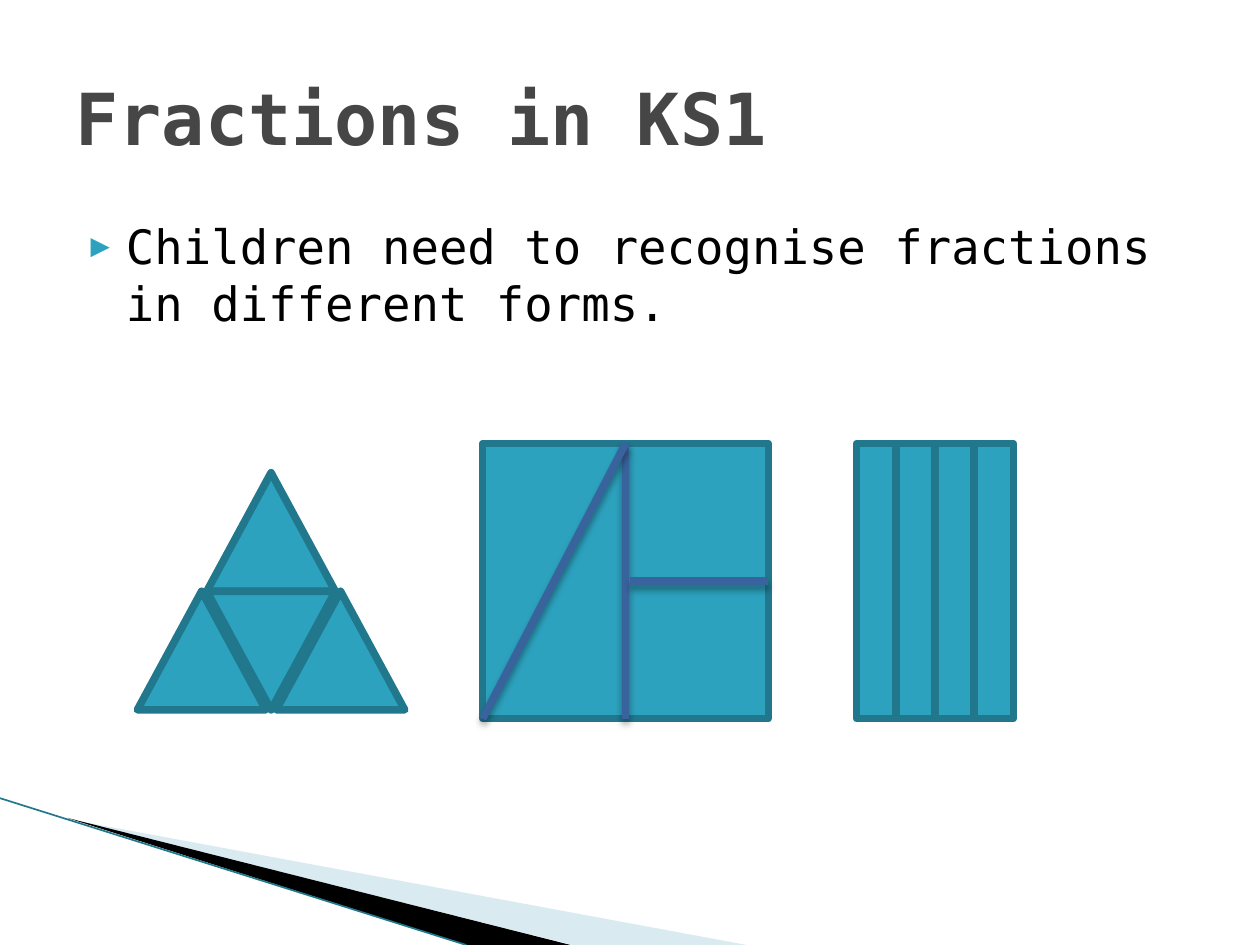
from lxml.etree import SubElement as Sub
from pptx import Presentation
from pptx.dml.color import RGBColor as Rgb
from pptx.enum.shapes import MSO_CONNECTOR as Link, MSO_SHAPE as Kind
from pptx.enum.text import MSO_ANCHOR as Anchor, PP_ALIGN as Align
from pptx.oxml.ns import qn
from pptx.util import Cm, Pt

TITLE = "Fractions in KS1"
BODY = "Children need to recognise fractions in different forms."

THEME = {
    "font": "DejaVu Sans Mono",
    "fill": "2DA2BF", "edge": "21788D", "cut": "39639D",
    "pale": "A0CBDC", "black": "000000", "grey": "464646",
    "title": 41, "body": 27, "line": 4.33, "thin": 0.95,
}

# All lengths in cm; boxes are left, top, width, height
HEAD = (1.27, 0.76, 22.86, 3.18)
TEXT = (1.27, 4.25, 22.86, 2.9)
WEDGES = [
    ("pale", 40, [(1.4, 16.52), (15.05, 19.05), (11.55, 19.05)]),
    ("black", 100, [(1.36, 16.49), (11.5, 19.05), (9.4, 19.05)]),
]
SWEEP = (0, 16.09, 9.4, 19.05)
TRI = {"left": 4.17, "top": 9.53, "wide": 2.59, "high": 2.39, "step": 1.4}
TILES = [(0, 0, 0), (-1, 1, 0), (1, 1, 0), (0, 1, 180)]  # column, row, turn
SQUARE = (9.73, 8.94, 5.76, 5.55)
BARS = {"left": 17.27, "wide": 0.79, "count": 4}


def tint(name):
    return Rgb.from_string(THEME[name])


def place(shape, box):
    for key, val in zip(("left", "top", "width", "height"), box):
        setattr(shape, key, Cm(val))


def write(shape, text, **look):
    frame = shape.text_frame
    frame.word_wrap = True
    para = frame.paragraphs[0]
    para.text = text
    para.alignment = Align.LEFT
    font = para.runs[0].font
    font.color.rgb = tint(look.pop("ink"))
    for key, val in look.items():
        setattr(font, key, val)
    return frame


def bullet(para):
    props = para._p.get_or_add_pPr()
    props.set("marL", str(Cm(1.02)))
    props.set("indent", str(Cm(-0.71)))
    color = Sub(props, qn("a:buClr"))
    Sub(color, qn("a:srgbClr"), val=THEME["fill"])
    Sub(props, qn("a:buSzPct"), val="68000")
    Sub(props, qn("a:buFont"), typeface=THEME["font"])
    Sub(props, qn("a:buChar"), char="▶")


def wedge(shapes, name, alpha, points):
    spots = [(Cm(x), Cm(y)) for x, y in points]
    form = shapes.build_freeform(*spots[0], scale=1.0)
    form.add_line_segments(spots[1:], close=True)
    shape = form.convert_to_shape()
    shape.shadow.inherit = False
    shape.fill.solid()
    shape.fill.fore_color.rgb = tint(name)
    shape.line.fill.background()
    if alpha < 100:
        color = shape._element.spPr.find(qn("a:solidFill"))[0]
        Sub(color, qn("a:alpha"), val=str(alpha * 1000))


def piece(shapes, kind, box, turn=0):
    """Add one equal part of a divided figure."""
    shape = shapes.add_shape(kind, *map(Cm, box))
    shape.rotation = turn
    shape.shadow.inherit = False
    shape.fill.solid()
    shape.fill.fore_color.rgb = tint("fill")
    shape.line.color.rgb = tint("edge")
    shape.line.width = Pt(THEME["line"])
    Sub(shape.line._ln, qn("a:round"))


def stroke(shapes, ends, name, size, shade=False):
    line = shapes.add_connector(Link.STRAIGHT, *map(Cm, ends))
    line.line.color.rgb = tint(name)
    line.line.width = Pt(THEME[size])
    effect = Sub(line._element.spPr, qn("a:effectLst"))
    if shade:
        drop = Sub(effect, qn("a:outerShdw"), blurRad=str(Pt(4)), dist=str(Pt(3)),
                   dir="5400000", rotWithShape="0")
        color = Sub(drop, qn("a:srgbClr"), val=THEME["black"])
        Sub(color, qn("a:alpha"), val="35000")


def main():
    deck = Presentation()
    deck.slide_width, deck.slide_height = Cm(25.4), Cm(19.05)
    slide = deck.slides.add_slide(deck.slide_layouts[5])
    shapes = slide.shapes

    for part in WEDGES:
        wedge(shapes, *part)
    stroke(shapes, SWEEP, "edge", "thin")

    place(shapes.title, HEAD)
    frame = write(shapes.title, TITLE, ink="grey", name=THEME["font"],
                  size=Pt(THEME["title"]), bold=True)
    frame.vertical_anchor = Anchor.MIDDLE
    body = shapes.add_textbox(*map(Cm, TEXT))
    bullet(body.text_frame.paragraphs[0])
    write(body, BODY, ink="black", name=THEME["font"], size=Pt(THEME["body"]))

    wide, high = TRI["wide"], TRI["high"]
    for col, row, turn in TILES:
        box = (TRI["left"] + col * TRI["step"], TRI["top"] + row * high, wide, high)
        piece(shapes, Kind.ISOSCELES_TRIANGLE, box, turn)

    piece(shapes, Kind.RECTANGLE, SQUARE)
    left, top, wide, high = SQUARE
    mid, half = left + wide / 2, top + high / 2
    right, base = left + wide, top + high
    for ends in [(mid, top, mid, base), (right, half, mid + 0.1, half),
                 (mid, top, left, base)]:
        stroke(shapes, ends, "cut", "line", shade=True)

    for i in range(BARS["count"]):
        box = (BARS["left"] + i * BARS["wide"], top, BARS["wide"], high)
        piece(shapes, Kind.RECTANGLE, box)

    deck.save("out.pptx")


if __name__ == "__main__":
    main()
